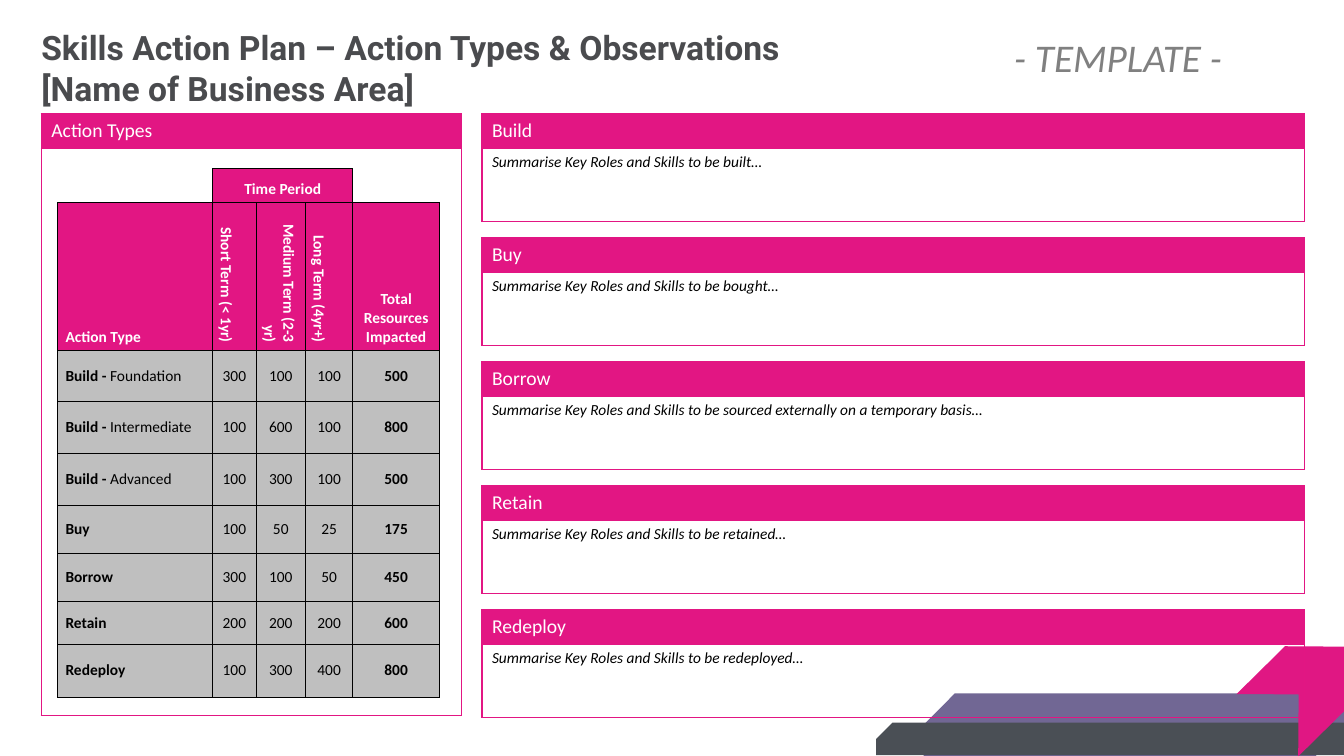
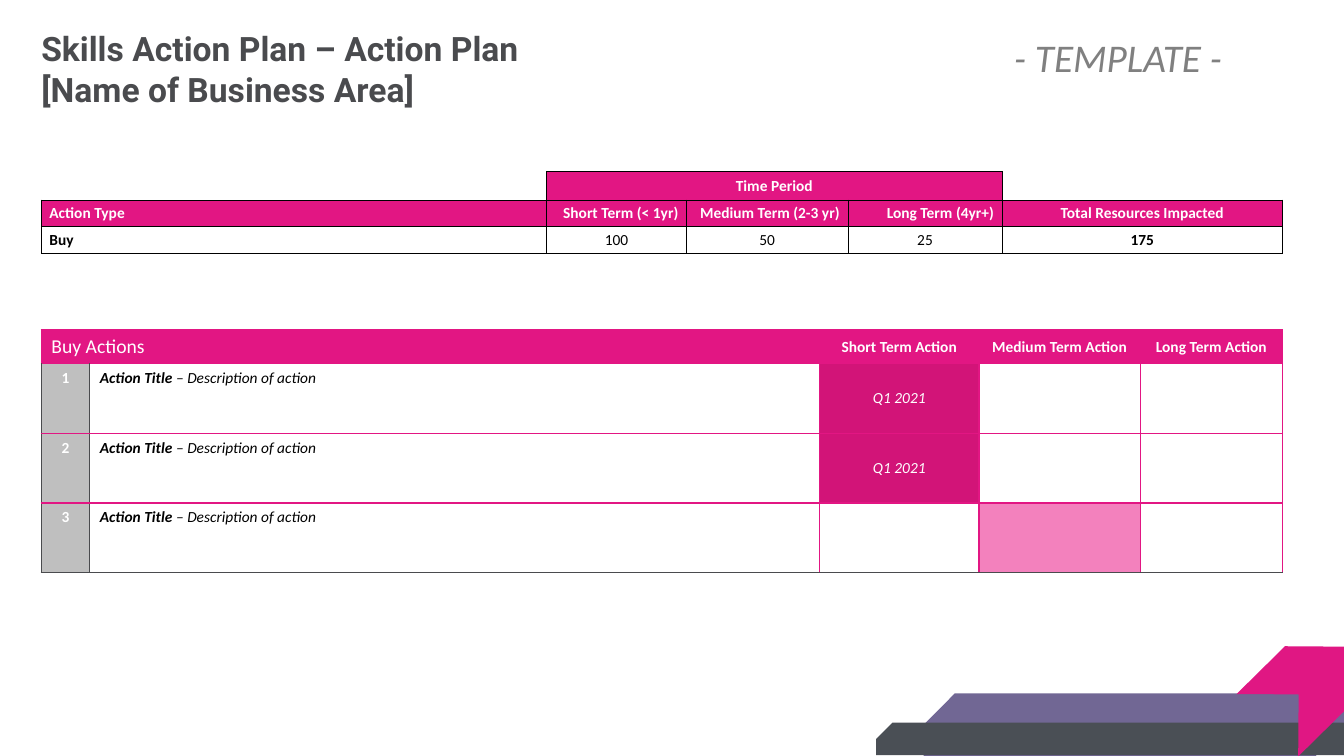
from lxml.etree import SubElement
from pptx import Presentation
from pptx.dml.color import RGBColor
from pptx.enum.shapes import MSO_SHAPE as Preset
from pptx.enum.text import MSO_ANCHOR as Anchor, MSO_AUTO_SIZE as AutoSize, PP_ALIGN as Align
from pptx.oxml.ns import qn
from pptx.util import Inches, Pt

# Shared colours and styles
PINK = RGBColor(0xE2, 0x16, 0x83)
CORNER_PINK = RGBColor(0xE0, 0x17, 0x83)
DEEP_PINK = RGBColor(0xD2, 0x14, 0x78)
LIGHT_PINK = RGBColor(0xF3, 0x81, 0xBD)
PURPLE = RGBColor(0x71, 0x67, 0x94)
SLATE = RGBColor(0x4A, 0x4F, 0x55)
TITLE_GREY = RGBColor(0x4A, 0x4B, 0x4E)
STAMP_GREY = RGBColor(0x80, 0x80, 0x80)
CELL_GREY = RGBColor(0xBF, 0xBF, 0xBF)
WHITE = RGBColor(0xFF, 0xFF, 0xFF)
BLACK = RGBColor(0, 0, 0)

PLAIN_TABLE = "{2D5ABB26-0587-4C30-8999-92F81FD0307C}"
LEFT = 0.41
BAND = 0.34  # height of a pink heading row
TOP_ROW = 1.13

TITLE_FONT = dict(name="Roboto", size=Pt(24), bold=True)
STAMP_FONT = dict(name="Calibri", size=Pt(28), italic=True)
TIGHT = dict(margin_left=Inches(0.08), margin_right=Inches(0.08),
             margin_top=Inches(0.04), margin_bottom=Inches(0.04))
MIDDLE = dict(TIGHT, vertical_anchor=Anchor.MIDDLE)
BOTTOM = dict(TIGHT, vertical_anchor=Anchor.BOTTOM)

# Shared decoration: preset, (left, top, width, height), rotation, flipped, adjustments, colour
DECORATION = [
    (Preset.SNIP_2_DIAG_RECTANGLE, (10.95, 5.09, 0.62, 4.2), 270, False, (0, 0.5), PURPLE),
    (Preset.SNIP_1_RECTANGLE, (8.69, 7.17, 4.68, 0.32), 0, True, (0.5,), SLATE),
    (Preset.CHEVRON, (12.41, 6.37, 1.11, 0.87), 315.4, False, (), CORNER_PINK),
]

# Content
AREA = "[Name of Business Area]"
TERMS = ["Short Term (< 1yr)", "Medium Term (2-3 yr)", "Long Term (4yr+)"]
RESOURCES = [
    ("Build - ", "Foundation", (300, 100, 100)),
    ("Build - ", "Intermediate", (100, 600, 100)),
    ("Build - ", "Advanced", (100, 300, 100)),
    ("Buy", "", (100, 50, 25)),
    ("Borrow", "", (300, 100, 50)),
    ("Retain", "", (200, 200, 200)),
    ("Redeploy", "", (100, 300, 400)),
]
SUMMARIES = [
    ("Build", "Summarise Key Roles and Skills to be built…"),
    ("Buy", "Summarise Key Roles and Skills to be bought…"),
    ("Borrow", "Summarise Key Roles and Skills to be sourced externally on a temporary basis…"),
    ("Retain", "Summarise Key Roles and Skills to be retained…"),
    ("Redeploy", "Summarise Key Roles and Skills to be redeployed…"),
]
ACTION_HEADS = ["Short Term Action", "Medium Term Action", "Long Term Action"]
ACTIONS = [  # (text, fill) for each term
    [("Q1 2021", DEEP_PINK), ("", None), ("", None)],
    [("Q1 2021", DEEP_PINK), ("", None), ("", None)],
    [("", None), ("", LIGHT_PINK), ("", None)],
]


def set_all(target, values):
    for name, value in values.items():
        setattr(target, name, value)


def write(para, text, color, font):
    span = para.add_run()
    span.text = text
    set_all(span.font, font)
    span.font.color.rgb = color


def entry(*spans, size=11, color=BLACK, fill=None, align=Align.LEFT,
          box=None, vert=None, lines=None, across=1):
    """One table cell; each span is (text, font values)."""
    return dict(spans=spans, size=size, color=color, fill=fill, align=align,
                box=box or {}, vert=vert, lines=lines or {}, across=across)


def heading(text, **options):
    return entry((text, dict(bold=True)), **dict(
        dict(color=WHITE, fill=PINK, align=Align.CENTER, box=BOTTOM), **options))


def band(text, **options):
    return entry((text, {}), size=14, color=WHITE, fill=PINK, **options)


def draw_lines(cell, colors, width):
    props = cell._tc.get_or_add_tcPr()
    for place, side in enumerate("LRTB"):
        line = SubElement(props, qn(f"a:ln{side}"), w=str(Pt(width)))
        props.insert(place, line)
        if colors[side] is None:
            SubElement(line, qn("a:noFill"))
        else:
            solid = SubElement(line, qn("a:solidFill"))
            SubElement(solid, qn("a:srgbClr"), val=str(colors[side]))


def fill_cell(cell, item, line_color, line_width):
    set_all(cell, item["box"])
    if item["fill"] is None:
        cell.fill.background()
    else:
        cell.fill.solid()
        cell.fill.fore_color.rgb = item["fill"]
    if item["vert"]:
        cell._tc.get_or_add_tcPr().set("vert", item["vert"])
    draw_lines(cell, {**dict.fromkeys("LRTB", line_color), **item["lines"]}, line_width)
    para = cell.text_frame.paragraphs[0]
    para.alignment = item["align"]
    for text, font in item["spans"]:
        if text:
            write(para, text, item["color"], dict(name="Calibri", size=Pt(item["size"]), **font))
    para._p.get_or_add_endParaRPr().set("sz", str(item["size"] * 100))


def add_grid(page, left, top, columns, rows, cells, line_color, line_width):
    frame = page.shapes.add_table(len(rows), len(columns), Inches(left), Inches(top),
                                  Inches(sum(columns)), Inches(sum(rows)))
    table = frame.table
    table._tbl.tblPr.find(qn("a:tableStyleId")).text = PLAIN_TABLE
    set_all(table, dict(first_row=False, horz_banding=False))
    for column, width in zip(table.columns, columns):
        column.width = Inches(width)
    for row, height in zip(table.rows, rows):
        row.height = Inches(height)
    for r, line in enumerate(cells):
        c = 0
        for item in line:
            last = c + item["across"] - 1
            for spot in range(c, last + 1):
                fill_cell(table.cell(r, spot), item if spot == c else dict(item, spans=()),
                          line_color, line_width)
            if last > c:
                table.cell(r, c).merge(table.cell(r, last))
            c = last + 1


def add_panel(page, left, top, width, body_height, title, body=""):
    cells = [[band(title)], [entry((body, dict(italic=True)))]]
    add_grid(page, left, top, [width], [BAND, body_height], cells, PINK, 1)


def add_resources(page, left, top, columns, rows, resources, fill, vert=None):
    """Table of resources by action type and time period, with totals."""
    cells = [
        [entry(lines=dict(L=None, T=None)), heading("Time Period", across=3),
         entry(lines=dict(R=None, T=None))],
        [heading("Action Type", align=Align.LEFT)]
        + [heading(term, align=Align.RIGHT, box=MIDDLE, vert=vert) for term in TERMS]
        + [heading("Total Resources Impacted")],
    ]
    number = dict(fill=fill, box=MIDDLE, align=Align.CENTER)
    for kind, level, counts in resources:
        cells.append(
            [entry((kind, dict(bold=True)), (level, {}), fill=fill, box=MIDDLE)]
            + [entry((str(count), {}), **number) for count in counts]
            + [entry((str(sum(counts)), dict(bold=True)), **number)])
    add_grid(page, left, top, columns, rows, cells, BLACK, 0.5)


def decorate(layout, page):
    """Draw the corner shapes and move them to the layout."""
    for preset, place, rotation, flipped, adjustments, color in DECORATION:
        shape = page.shapes.add_shape(preset, *map(Inches, place))
        shape.rotation = rotation
        shape.shadow.inherit = False
        shape.fill.solid()
        shape.fill.fore_color.rgb = color
        shape.line.fill.background()
        for i, value in enumerate(adjustments):
            shape.adjustments[i] = value
        if flipped:
            shape._element.spPr.xfrm.set("flipH", "1")
        layout.shapes._spTree.append(shape._element)


def add_page(deck, title, top):
    page = deck.slides.add_slide(deck.slide_layouts[5])
    box = page.shapes.title
    set_all(box, dict(left=Inches(LEFT), top=Inches(top), width=Inches(9.24), height=Inches(0.81)))
    frame = box.text_frame
    set_all(frame, dict(margin_left=0, margin_right=0, margin_top=0, margin_bottom=0,
                        word_wrap=True, auto_size=AutoSize.NONE, vertical_anchor=Anchor.TOP))
    for para, text in ((frame.paragraphs[0], title), (frame.add_paragraph(), AREA)):
        para.alignment = Align.LEFT
        write(para, text, TITLE_GREY, TITLE_FONT)
    stamp = page.shapes.add_textbox(*map(Inches, (9.96, 0.28, 2.38, 0.57)))
    stamp.text_frame.word_wrap = False
    write(stamp.text_frame.paragraphs[0], "- TEMPLATE -", STAMP_GREY, STAMP_FONT)
    return page


def build_types(deck):
    page = add_page(deck, "Skills Action Plan – Action Types & Observations", 0.27)
    decorate(deck.slide_layouts[5], page)
    add_panel(page, LEFT, TOP_ROW, 4.17, 5.63, "Action Types")
    add_resources(page, 0.57, 1.67, [1.54, 0.43, 0.49, 0.47, 0.86],
                  [BAND, 1.47, 0.5, 0.52, 0.51, 0.48, 0.48, 0.42, 0.53],
                  RESOURCES, CELL_GREY, vert="vert")
    for i, (title, body) in enumerate(SUMMARIES):
        add_panel(page, 4.78, TOP_ROW + 1.23 * i, 8.16, 0.73, title, body)


def build_plan(deck):
    page = add_page(deck, "Skills Action Plan – Action Plan", 0.28)
    buy = [row for row in RESOURCES if row[0] == "Buy"]
    add_resources(page, LEFT, 1.7, [5.01, 1.39, 1.6, 1.53, 2.78], [0.26] * 3, buy, None)

    # Numbered actions with their timing
    cells = [[band("Buy Actions", across=2)] + [heading(text, box=MIDDLE) for text in ACTION_HEADS]]
    for number, timing in enumerate(ACTIONS, 1):
        edge = dict(B=TITLE_GREY) if number == len(ACTIONS) else {}
        cells.append(
            [entry((str(number), dict(bold=True)), color=WHITE, fill=CELL_GREY,
                   align=Align.CENTER, lines=dict(edge, L=TITLE_GREY, R=TITLE_GREY)),
             entry(("Action Title ", dict(bold=True, italic=True)),
                   ("– Description of action", dict(italic=True)),
                   lines=dict(edge, L=TITLE_GREY, R=TITLE_GREY))]
            + [entry((text, dict(italic=True)), color=WHITE, fill=fill, align=Align.CENTER,
                     box=dict(vertical_anchor=Anchor.MIDDLE), lines=edge)
               for text, fill in timing])
    add_grid(page, LEFT, 3.27, [0.48, 7.24, 1.58, 1.6, 1.41], [BAND] + [0.69] * 3, cells, PINK, 1)


def main():
    deck = Presentation()
    set_all(deck, dict(slide_width=Inches(13.33), slide_height=Inches(7.5)))
    build_types(deck)
    build_plan(deck)
    deck.save("out.pptx")


if __name__ == "__main__":
    main()
